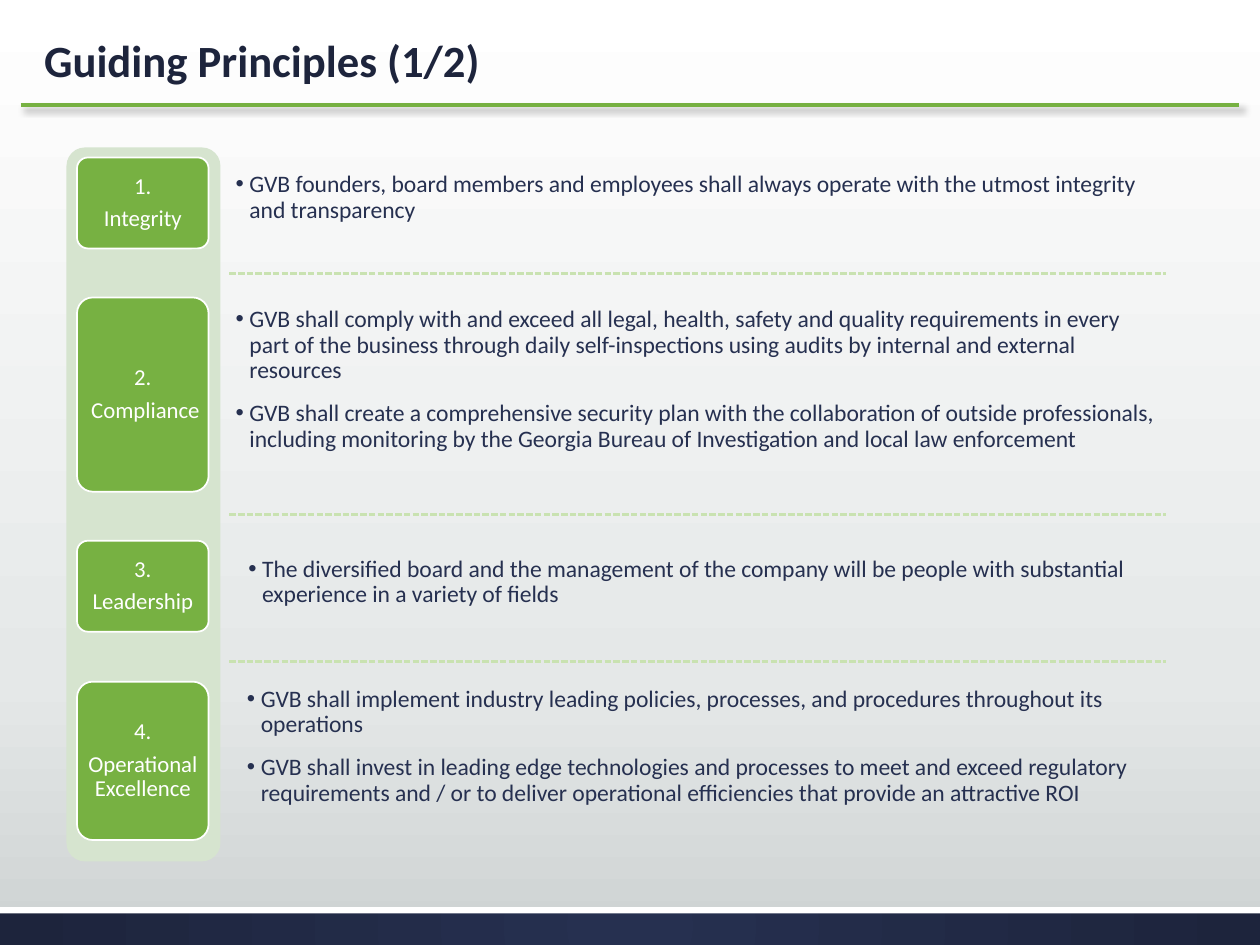
from lxml import etree
from pptx import Presentation
from pptx.dml.color import RGBColor
from pptx.enum.dml import MSO_LINE_DASH_STYLE as Dash
from pptx.enum.shapes import MSO_CONNECTOR as Connector, MSO_SHAPE as Shape
from pptx.enum.text import MSO_ANCHOR as Anchor, MSO_AUTO_SIZE as AutoSize, PP_ALIGN as Align
from pptx.oxml import parse_xml
from pptx.oxml.ns import nsdecls, qn
from pptx.util import Pt

FONT = "Calibri"
GREEN, PALE_GREEN, DASH_GREEN = "77B142", "D6E4CF", "C9E2B1"
NAVY, DARK_NAVY, WHITE = "263050", "1D243C", "FFFFFF"

PRINCIPLES = [
    ("1.", "Integrity", (90, 52), (131.75, 97.2, 534.25, 32.4), [
        "GVB founders, board members and employees shall always operate with the utmost "
        "integrity and transparency"]),
    ("2.", " Compliance", (170, 111), (131.75, 174.25, 534.25, 101.5), [
        "GVB shall comply with and exceed all legal, health, safety and quality requirements "
        "in every part of the business through daily self-inspections using audits by internal "
        "and external resources",
        "GVB shall create a comprehensive security plan with the collaboration of outside "
        "professionals, including monitoring by the Georgia Bureau of Investigation and local "
        "law enforcement"]),
    ("3.", "Leadership", (309, 52), (139, 316.8, 532.8, 32.4), [
        "The diversified board and the management of the company will be people with "
        "substantial experience in a variety of fields"]),
    ("4.", "Operational Excellence", (389.5, 90.5), (138.25, 391, 534.25, 72), [
        "GVB shall implement industry leading policies, processes, and procedures throughout "
        "its operations",
        "GVB shall invest in leading edge technologies and processes to meet and exceed "
        "regulatory requirements and / or to deliver operational efficiencies that provide an "
        "attractive ROI"]),
]


def color(value):
    return RGBColor.from_string(value)


def add_run(para, text, size, value, bold=False):
    span = para.add_run()
    span.text = text
    span.font.name = FONT
    span.font.size = Pt(size)
    span.font.bold = bold
    span.font.color.rgb = color(value)
    para.line_spacing = 0.9


def set_insets(frame, side, edge):
    frame.margin_left = frame.margin_right = Pt(side)
    frame.margin_top = frame.margin_bottom = Pt(edge)


def set_gradient(fill, parent, stops, direction):
    fill.solid()
    marks = "".join(f'<a:gs pos="{position * 1000}"><a:srgbClr val="{value}"/></a:gs>'
                    for position, value in stops)
    gradient = parse_xml(f'<a:gradFill {nsdecls("a")} rotWithShape="1">'
                         f'<a:gsLst>{marks}</a:gsLst>{direction}</a:gradFill>')
    solid = parent.find(qn("a:solidFill"))
    parent.replace(solid, gradient)


def add_block(page, kind, bounds, fill, line=None):
    box = page.shapes.add_shape(kind, *map(Pt, bounds))
    box.shadow.inherit = False
    box.fill.solid()
    box.fill.fore_color.rgb = color(fill)
    if line:
        box.line.color.rgb = color(line)
        box.line.width = Pt(1)
    else:
        box.line.fill.background()
    if kind == Shape.ROUNDED_RECTANGLE:
        box.adjustments[0] = 0.12
    return box


def add_rule(page, left, right, y, value, width):
    rule = page.shapes.add_connector(Connector.STRAIGHT, Pt(left), Pt(y), Pt(right), Pt(y))
    rule.line.color.rgb = color(value)
    rule.line.width = Pt(width)
    effects = etree.SubElement(rule._element.spPr, qn("a:effectLst"))
    return rule, effects


def draw_background(page, width, height):
    background = page.background.fill
    background.solid()
    properties = page._element.cSld.find(qn("p:bg")).find(qn("p:bgPr"))
    set_gradient(background, properties, [(0, WHITE), (72, "E5E8E8"), (100, "CDD2D2")],
                 '<a:lin ang="5400000" scaled="0"/>')
    top = height - 21.6
    footer = add_block(page, Shape.RECTANGLE, (0, top, width, 21.6), NAVY)
    set_gradient(footer.fill, footer._element.spPr, [(0, NAVY), (100, DARK_NAVY)],
                 '<a:path path="circle"><a:fillToRect l="50000" t="50000" r="50000" '
                 'b="50000"/></a:path>')
    add_block(page, Shape.RECTANGLE, (0, top, width, 3.6), WHITE)


def draw_title(page, left, top, width, height):
    title = page.shapes.title
    title.left, title.top, title.width, title.height = map(Pt, (left, top, width, height))
    frame = title.text_frame
    frame.auto_size = AutoSize.NONE
    frame.vertical_anchor = Anchor.BOTTOM
    para = frame.paragraphs[0]
    para.alignment = Align.LEFT
    add_run(para, "Guiding Principles (1/2)", 25.5, DARK_NAVY, bold=True)
    rule, effects = add_rule(page, left - 6, left + 690, top + 47.75, GREEN, 2.25)
    effects.append(parse_xml(
        f'<a:outerShdw {nsdecls("a")} blurRad="{Pt(4)}" dist="{Pt(3)}" dir="2700000" '
        'rotWithShape="0"><a:srgbClr val="000000"><a:alpha val="40000"/></a:srgbClr>'
        '</a:outerShdw>'))


def draw_label(page, bounds, number, name):
    label = add_block(page, Shape.ROUNDED_RECTANGLE, bounds, GREEN, WHITE)
    frame = label.text_frame
    frame.word_wrap = True
    frame.vertical_anchor = Anchor.MIDDLE
    set_insets(frame, 1, 4.3)
    for para, text in zip((frame.paragraphs[0], frame.add_paragraph()), (number, name)):
        para.alignment = Align.CENTER
        para.space_after = Pt(4.5)
        add_run(para, text, 13, WHITE)


def draw_bullets(page, bounds, items):
    box = page.shapes.add_textbox(*map(Pt, bounds))
    frame = box.text_frame
    frame.word_wrap = True
    frame.auto_size = AutoSize.SHAPE_TO_FIT_TEXT
    set_insets(frame, 2.9, 1.4)
    for index, item in enumerate(items):
        para = frame.add_paragraph() if index else frame.paragraphs[0]
        para.space_before = Pt(10)
        add_run(para, item, 13.5, NAVY)
        properties = para._p.get_or_add_pPr()
        properties.set("marL", str(Pt(7.9)))
        properties.set("indent", str(-Pt(7.9)))
        etree.SubElement(properties, qn("a:buFont"), typeface="Arial")
        etree.SubElement(properties, qn("a:buChar"), char="•")


def draw_principles(page, left, top, width, height):
    add_block(page, Shape.ROUNDED_RECTANGLE, (left, top, width, height), PALE_GREEN)
    for number, name, (label_top, label_height), text_bounds, items in PRINCIPLES:
        draw_label(page, (left + 6, label_top, width - 12.8, label_height), number, name)
        draw_bullets(page, text_bounds, items)
    for offset in (72, 209.75, 293.75):
        rule, _ = add_rule(page, left + 93, left + 628, top + offset, DASH_GREEN, 1.25)
        rule.line.dash_style = Dash.SQUARE_DOT


def main():
    deck = Presentation()
    deck.slide_width, deck.slide_height = Pt(720), Pt(540)
    page = deck.slides.add_slide(deck.slide_layouts[5])
    draw_background(page, 720, 540)
    draw_title(page, 18, 12.25, 561.5, 41)
    draw_principles(page, 38, 84.25, 88, 408)
    deck.save("out.pptx")


if __name__ == "__main__":
    main()
